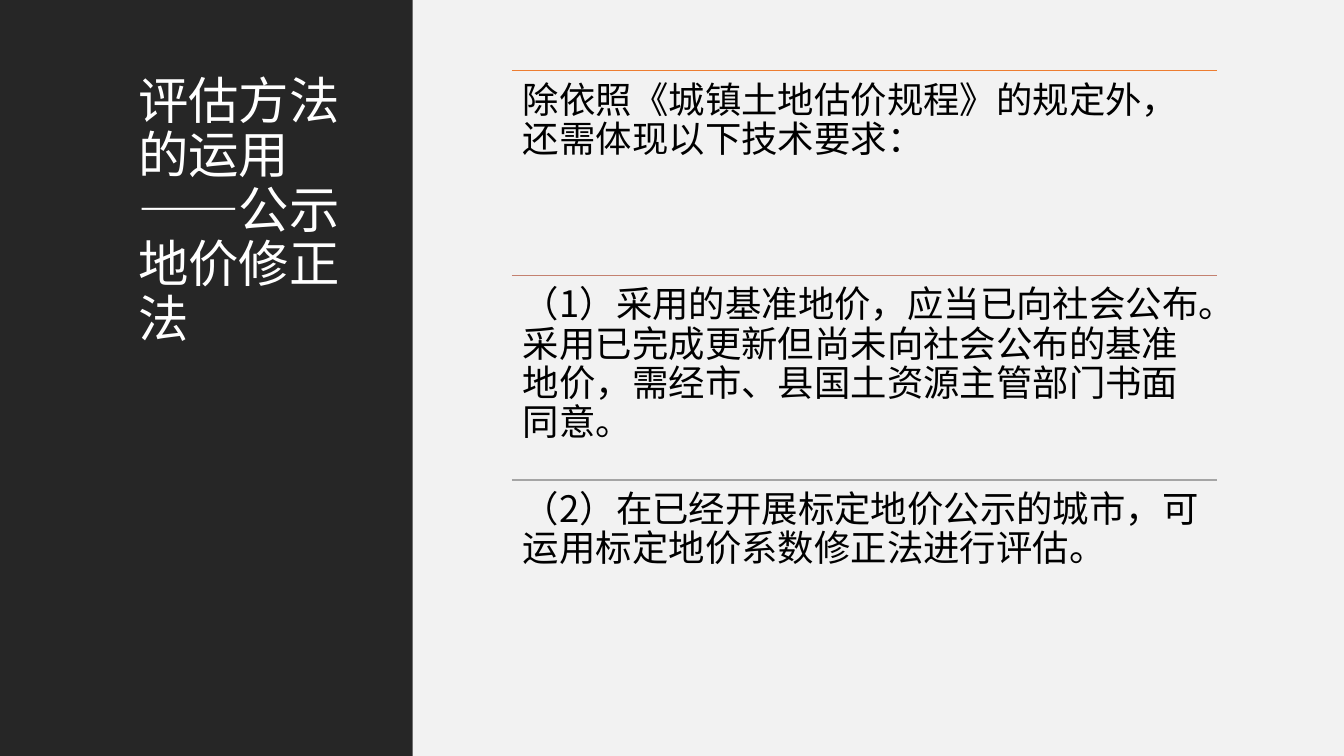
from dataclasses import dataclass

from lxml.etree import SubElement
from pptx import Presentation
from pptx.dml.color import RGBColor as Rgb
from pptx.enum.shapes import MSO_CONNECTOR as Link, MSO_SHAPE as Kind
from pptx.enum.text import MSO_ANCHOR as Anchor
from pptx.oxml.ns import qn
from pptx.util import Cm, Pt

TITLE = "评估方法的运用——公示地价修正法"
RULES = [
    ("ED7D31", "除依照《城镇土地估价规程》的规定外，还需体现以下技术要求："),
    ("C48170", "（1）采用的基准地价，应当已向社会公布。采用已完成更新但尚未向社会公布的"
               "基准地价，需经市、县国土资源主管部门书面同意。"),
    ("A5A5A5", "（2）在已经开展标定地价公示的城市，可运用标定地价系数修正法进行评估。"),
]


@dataclass(frozen=True)
class Theme:
    font: str = "Noto Sans CJK SC"
    dark: str = "262626"
    pale: str = "F2F2F2"
    white: str = "FFFFFF"
    ink: str = "000000"
    head: int = 36
    body: int = 26
    rule: int = 1


LOOK = Theme()
WIDTH, HEIGHT = 33.87, 19.05
SIDE = 10.4
TOP = 1.78
LEFT, SPAN, STEP = 12.9, 17.78, 5.16


def add_panel(slide, left, width, color):
    panel = slide.shapes.add_shape(Kind.RECTANGLE, Cm(left), 0, Cm(width), Cm(HEIGHT))
    panel.shadow.inherit = False
    panel.fill.solid()
    panel.fill.fore_color.rgb = Rgb.from_string(color)
    panel.line.fill.background()


def add_text(slide, box, text, size, color, pad):
    """Place text in box (left, top, width, height); pad is (side, top) inset."""
    frame = slide.shapes.add_textbox(*map(Cm, box)).text_frame
    frame.word_wrap = True
    frame.vertical_anchor = Anchor.TOP
    frame.margin_left = frame.margin_right = Cm(pad[0])
    frame.margin_top = frame.margin_bottom = Cm(pad[1])
    para = frame.paragraphs[0]
    para.line_spacing = 0.9
    run = para.add_run()
    run.text = text
    run.font.size = Pt(size)
    run.font.color.rgb = Rgb.from_string(color)
    run.font.name = LOOK.font
    east = SubElement(run.font._element, qn("a:ea"))
    east.set("typeface", LOOK.font)


def add_rule(slide, top, color):
    rule = slide.shapes.add_connector(
        Link.STRAIGHT, Cm(LEFT), Cm(top), Cm(LEFT + SPAN), Cm(top))
    rule.line.color.rgb = Rgb.from_string(color)
    rule.line.width = Pt(LOOK.rule)
    SubElement(rule._element.spPr, qn("a:effectLst"))


def main():
    deck = Presentation()
    deck.slide_width, deck.slide_height = Cm(WIDTH), Cm(HEIGHT)
    slide = deck.slides.add_slide(deck.slide_layouts[6])

    add_panel(slide, SIDE, WIDTH - SIDE, LOOK.pale)
    add_panel(slide, 0, SIDE, LOOK.dark)
    add_text(slide, (3.23, TOP, 6.1, 15.5), TITLE, LOOK.head, LOOK.white, (0.25, 0.13))

    for row, (color, text) in enumerate(RULES):
        top = TOP + row * STEP
        add_rule(slide, top, color)
        add_text(slide, (LEFT, top, SPAN, STEP), text, LOOK.body, LOOK.ink, (0.28, 0.28))

    deck.save("out.pptx")


if __name__ == "__main__":
    main()
